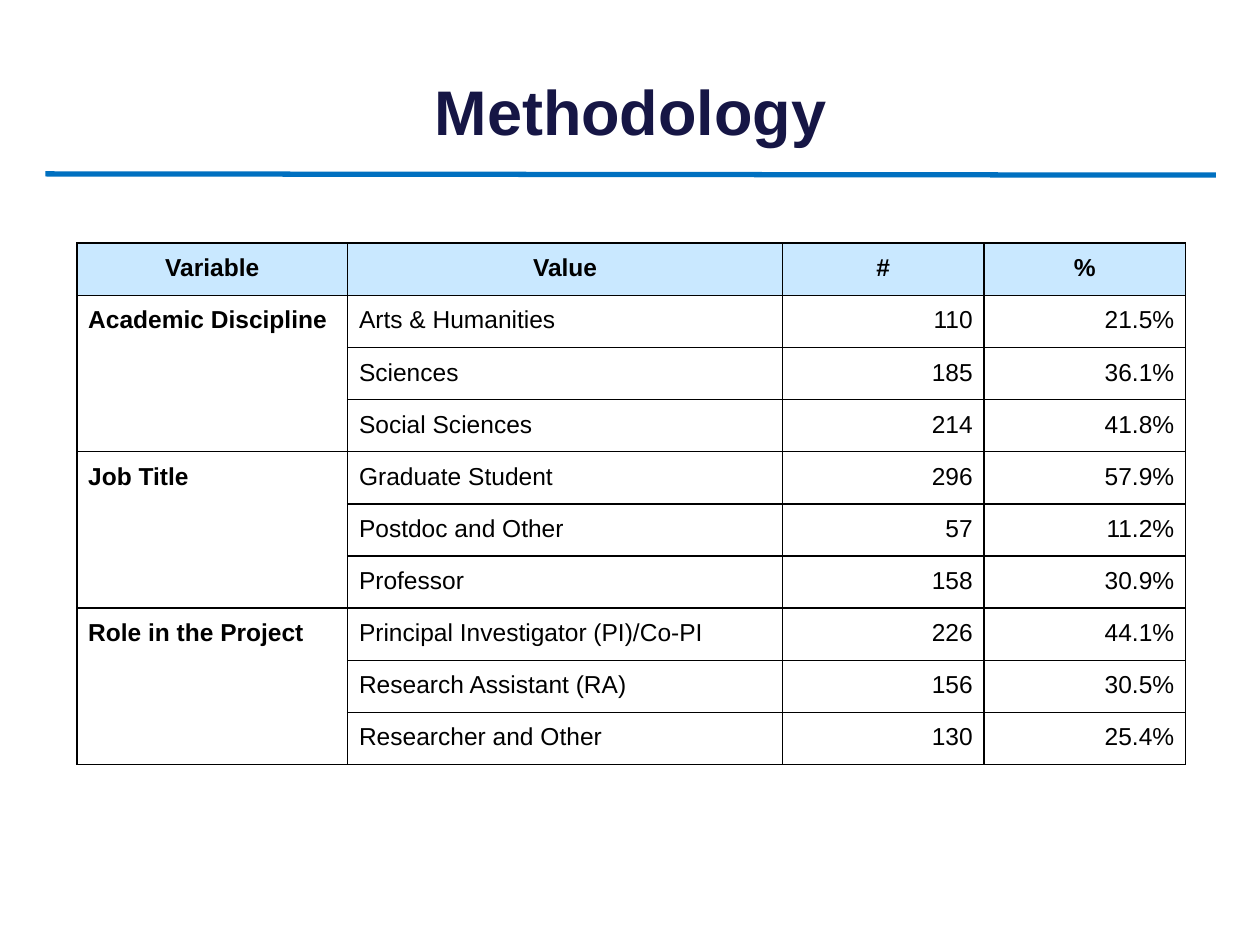
"""Build the Methodology slide with its table of respondent characteristics."""
from lxml import etree
from pptx import Presentation
from pptx.dml.color import RGBColor
from pptx.enum.shapes import MSO_CONNECTOR
from pptx.enum.text import MSO_ANCHOR, PP_ALIGN
from pptx.oxml.ns import qn
from pptx.util import Inches, Pt

STRAIGHT = MSO_CONNECTOR.STRAIGHT
MIDDLE, TOP = MSO_ANCHOR.MIDDLE, MSO_ANCHOR.TOP
LEFT, CENTER, RIGHT = PP_ALIGN.LEFT, PP_ALIGN.CENTER, PP_ALIGN.RIGHT
COLORS = {"title": "161645", "rule": "0070C0", "header": "C9E8FF", "ink": "000000"}
FONT = "Arial"

HEADINGS = ["Variable", "Value", "#", "%"]
GROUPS = {
    "Academic Discipline": [
        ("Arts & Humanities", "110", "21.5%"),
        ("Sciences", "185", "36.1%"),
        ("Social Sciences", "214", "41.8%"),
    ],
    "Job Title": [
        ("Graduate Student", "296", "57.9%"),
        ("Postdoc and Other", "57", "11.2%"),
        ("Professor", "158", "30.9%"),
    ],
    "Role in the Project": [
        ("Principal Investigator (PI)/Co-PI", "226", "44.1%"),
        ("Research Assistant (RA)", "156", "30.5%"),
        ("Researcher and Other", "130", "25.4%"),
    ],
}
COLUMN_WIDTHS = [2.15, 3.45, 1.6, 1.6]
COLUMN_ALIGNMENTS = [LEFT, LEFT, RIGHT, RIGHT]
ROW_COUNT = 1 + sum(len(members) for members in GROUPS.values())
TABLE_HEIGHT = Inches(4.14)


def style_text(frame, size, bold, color, alignment):
    paragraph = frame.paragraphs[0]
    paragraph.alignment = alignment
    for run in paragraph.runs:
        run.font.name = FONT
        run.font.size = Pt(size)
        run.font.bold = bold
        run.font.color.rgb = RGBColor.from_string(COLORS[color])


def add_borders(cell):
    properties = cell._tc.get_or_add_tcPr()
    for side in ("lnL", "lnR", "lnT", "lnB"):
        border = etree.SubElement(properties, qn(f"a:{side}"), w=str(Pt(1)))
        fill = etree.SubElement(border, qn("a:solidFill"))
        etree.SubElement(fill, qn("a:srgbClr"), val=COLORS["ink"])


prs = Presentation()
prs.slide_width, prs.slide_height = Inches(10), Inches(7.5)
slide = prs.slides.add_slide(prs.slide_layouts[5])

title = slide.shapes.title
title.left, title.top = Inches(0.36), Inches(0.36)
title.width, title.height = Inches(9.29), Inches(1.03)
title.text_frame.text = "Methodology"
title.text_frame.vertical_anchor = MIDDLE
style_text(title.text_frame, 36, True, "title", CENTER)

title_rule = slide.shapes.add_connector(
    STRAIGHT, title.left, Inches(1.38), title.left + title.width, Inches(1.39)
)
title_rule.line.color.rgb = RGBColor.from_string(COLORS["rule"])
title_rule.line.width = Pt(3)
etree.SubElement(title_rule._element.spPr, qn("a:effectLst"))

respondents = slide.shapes.add_table(
    ROW_COUNT, len(HEADINGS), Inches(0.61), Inches(1.93),
    Inches(sum(COLUMN_WIDTHS)), TABLE_HEIGHT,
).table
respondents.horz_banding = False
for column, width in zip(respondents.columns, COLUMN_WIDTHS):
    column.width = Inches(width)
for row in respondents.rows:
    row.height = TABLE_HEIGHT // ROW_COUNT

records = [HEADINGS]
for variable, members in GROUPS.items():
    first = len(records)
    last = first + len(members) - 1
    respondents.cell(first, 0).merge(respondents.cell(last, 0))
    for index, member in enumerate(members):
        records.append([variable if index == 0 else "", *member])

for row_index, record in enumerate(records):
    is_header = row_index == 0
    for column_index, value in enumerate(record):
        cell = respondents.cell(row_index, column_index)
        add_borders(cell)
        if is_header:
            cell.fill.solid()
            cell.fill.fore_color.rgb = RGBColor.from_string(COLORS["header"])
        else:
            cell.fill.background()
        if cell.is_spanned:
            continue
        cell.text_frame.text = value
        cell.vertical_anchor = TOP
        cell.margin_left = cell.margin_right = Inches(0.09)
        cell.margin_top = cell.margin_bottom = Inches(0.09)
        alignment = CENTER if is_header else COLUMN_ALIGNMENTS[column_index]
        style_text(cell.text_frame, 14, is_header or column_index == 0, "ink", alignment)

prs.save("out.pptx")
